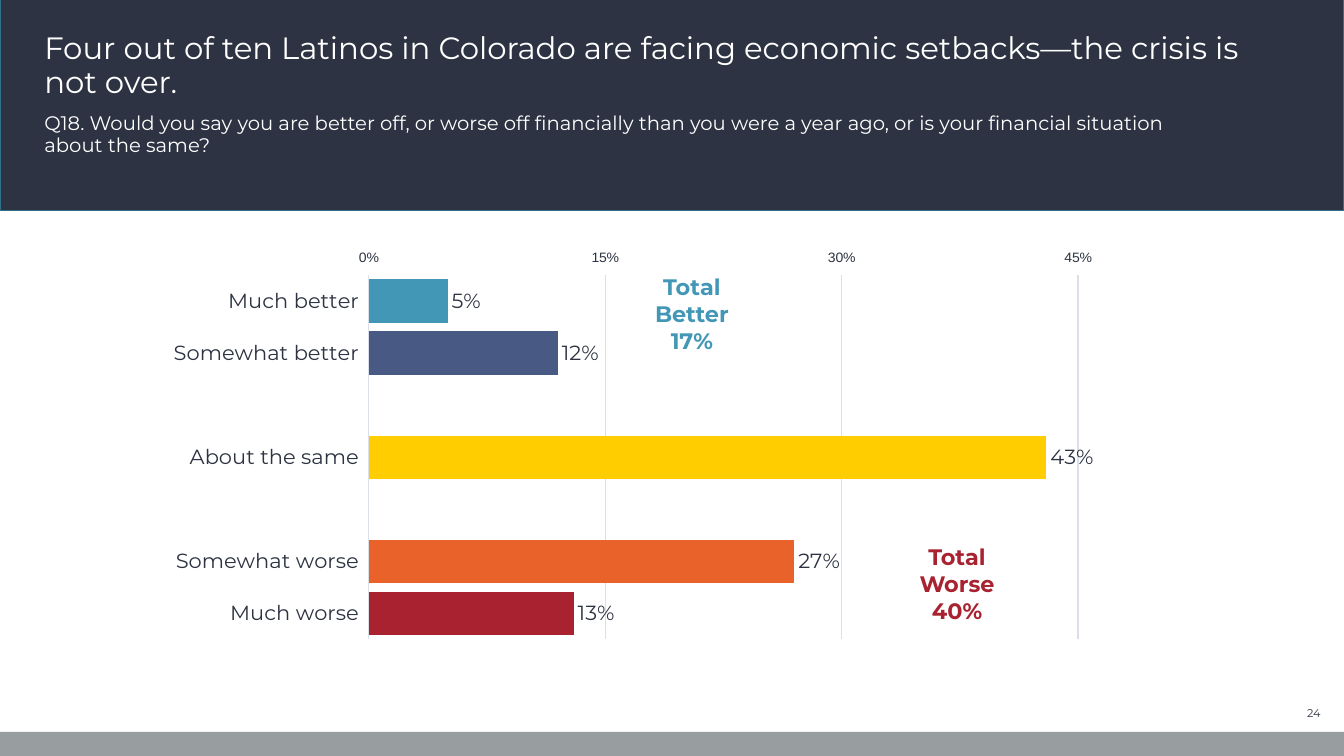
from typing import NamedTuple, Optional

from lxml import etree
from pptx import Presentation
from pptx import util as u
from pptx.chart.data import CategoryChartData
from pptx.dml.color import RGBColor
from pptx.enum import chart as charts
from pptx.enum import shapes, text
from pptx.oxml import ns

INK = RGBColor(0x2D, 0x33, 0x42)
EDGE = RGBColor(0x32, 0x70, 0x87)
GRAY = RGBColor(0x98, 0x9D, 0xA0)
GRID = RGBColor(0xDB, 0xDF, 0xE7)
WHITE = RGBColor(0xFF, 0xFF, 0xFF)
TEAL = RGBColor(0x43, 0x97, 0xB6)
BLUE = RGBColor(0x48, 0x5A, 0x84)
YELLOW = RGBColor(0xFF, 0xCD, 0x00)
ORANGE = RGBColor(0xE8, 0x62, 0x2A)
RED = RGBColor(0xA8, 0x22, 0x30)
FONT = "Montserrat"


class Frame(NamedTuple):
    left: float
    top: float
    width: float
    height: float

    def lengths(self) -> list[u.Length]:
        return [u.Pt(value) for value in self]


class Band(NamedTuple):
    frame: Frame
    fill: RGBColor
    edge: Optional[RGBColor]


class Answer(NamedTuple):
    label: str
    share: Optional[float] = None
    color: Optional[RGBColor] = None


class Label(NamedTuple):
    frame: Frame
    wording: str
    size: float
    color: RGBColor
    align: text.PP_ALIGN
    bold: bool = False
    anchor: text.MSO_ANCHOR = text.MSO_ANCHOR.TOP


BANDS = [
    Band(Frame(0, -2, 960, 152.5), INK, EDGE),
    Band(Frame(0, 522.7, 960, 17.3), GRAY, None),
]
HEADING = Label(
    Frame(24.5, 5, 910, 70),
    "Four out of ten Latinos in Colorado are facing economic setbacks—the crisis is not over.",
    22, WHITE, text.PP_ALIGN.LEFT, anchor=text.MSO_ANCHOR.BOTTOM)
QUESTION = Label(
    Frame(24.5, 77.8, 910, 66),
    "Q18. Would you say you are better off, or worse off financially than you were a year ago, "
    "or is your financial situation \vabout the same?",
    14, WHITE, text.PP_ALIGN.LEFT)
LABELS = [
    Label(Frame(894.2, 500.4, 56.2, 17.3), "24", 8, INK, text.PP_ALIGN.RIGHT,
          anchor=text.MSO_ANCHOR.MIDDLE),
    Label(Frame(442, 191.5, 104.4, 65.5), "Total Better\v17%", 16, TEAL, text.PP_ALIGN.CENTER, True),
    Label(Frame(631.4, 384.5, 104.4, 65.5), "Total Worse\v40%", 16, RED, text.PP_ALIGN.CENTER, True),
]
ANSWERS = [
    Answer("Much better", 0.05, TEAL),
    Answer("Somewhat better", 0.12, BLUE),
    Answer(""),
    Answer("About the same", 0.43, YELLOW),
    Answer(""),
    Answer("Somewhat worse", 0.27, ORANGE),
    Answer("Much worse", 0.13, RED),
]
CHART_FRAME = Frame(71.3, 178.6, 727.9, 298.8)
PLOT = {"x": 0.264, "y": 0.033, "w": 0.696, "h": 0.896}


def style_font(font, size: float, color: RGBColor, name: str = FONT, bold: bool = False) -> None:
    font.name, font.size, font.bold = name, u.Pt(size), bold
    font.color.rgb = color


def write_label(box, label: Label) -> None:
    frame = box.text_frame
    frame.text = label.wording
    frame.word_wrap = True
    frame.auto_size = text.MSO_AUTO_SIZE.NONE
    frame.vertical_anchor = label.anchor
    para = frame.paragraphs[0]
    para.alignment = label.align
    for span in para.runs:
        style_font(span.font, label.size, label.color, bold=label.bold)


def fill_placeholder(holder, label: Label) -> None:
    holder.left, holder.top, holder.width, holder.height = label.frame.lengths()
    write_label(holder, label)
    para = holder.text_frame.paragraphs[0]
    para.line_spacing = 0.9
    para.space_before = u.Pt(0)
    properties = para._p.get_or_add_pPr()
    properties.set("marL", "0")
    properties.set("indent", "0")
    etree.SubElement(properties, ns.qn("a:buNone"))


def add_band(page, band: Band) -> None:
    """Draw a filled strip behind the placeholders."""
    box = page.shapes.add_shape(shapes.MSO_SHAPE.RECTANGLE, *band.frame.lengths())
    box.shadow.inherit = False
    box.fill.solid()
    box.fill.fore_color.rgb = band.fill
    if band.edge is None:
        box.line.fill.background()
    else:
        box.line.color.rgb = band.edge
        box.line.width = u.Pt(1)
    box.element.getparent().insert(2, box.element)


def place_plot(chart) -> None:
    """Fix the inner plot area as fractions of the chart."""
    area = chart.element.find(".//" + ns.qn("c:plotArea"))
    for old in area.findall(ns.qn("c:layout")):
        area.remove(old)
    layout = etree.Element(ns.qn("c:layout"))
    manual = etree.SubElement(layout, ns.qn("c:manualLayout"))
    settings = {"layoutTarget": "inner", "xMode": "edge", "yMode": "edge", **PLOT}
    for name, value in settings.items():
        etree.SubElement(manual, ns.qn(f"c:{name}")).set("val", str(value))
    area.insert(0, layout)


def add_answer_chart(page) -> None:
    data = CategoryChartData(number_format="0%")
    data.categories = [answer.label for answer in ANSWERS]
    data.add_series("Series 1", [answer.share for answer in ANSWERS])
    chart = page.shapes.add_chart(
        charts.XL_CHART_TYPE.BAR_CLUSTERED, *CHART_FRAME.lengths(), data).chart
    chart.has_title = chart.has_legend = False
    style_font(chart.font, 10, INK)
    place_plot(chart)

    category, value = chart.category_axis, chart.value_axis
    category.reverse_order = True
    category.crosses = charts.XL_AXIS_CROSSES.MAXIMUM
    value.minimum_scale, value.maximum_scale, value.major_unit = 0, 0.45, 0.15
    value.tick_labels.number_format = "0%"
    value.tick_labels.number_format_is_linked = False
    value.major_gridlines.format.line.color.rgb = GRID
    value.major_gridlines.format.line.width = u.Pt(0.75)
    for axis, size, name in ((category, 15, FONT), (value, 10, "Arial")):
        axis.format.line.fill.background()
        style_font(axis.tick_labels.font, size, INK, name)

    plot = chart.plots[0]
    plot.gap_width = 20
    plot.vary_by_categories = False
    series = plot.series[0]
    series.format.fill.solid()
    series.format.fill.fore_color.rgb = TEAL
    for index, answer in enumerate(ANSWERS):
        if answer.color is not None:
            fill = series.points[index].format.fill
            fill.solid()
            fill.fore_color.rgb = answer.color
    labels = series.data_labels
    labels.show_value = True
    labels.number_format, labels.number_format_is_linked = "0%", False
    labels.position = charts.XL_LABEL_POSITION.OUTSIDE_END
    style_font(labels.font, 15, INK)


def main() -> None:
    deck = Presentation()
    deck.slide_width, deck.slide_height = u.Pt(960), u.Pt(540)
    page = deck.slides.add_slide(deck.slide_layouts[1])
    for band in BANDS:
        add_band(page, band)
    fill_placeholder(page.shapes.title, HEADING)
    fill_placeholder(page.placeholders[1], QUESTION)
    add_answer_chart(page)
    for label in LABELS:
        write_label(page.shapes.add_textbox(*label.frame.lengths()), label)
    deck.save("out.pptx")


if __name__ == "__main__":
    main()
